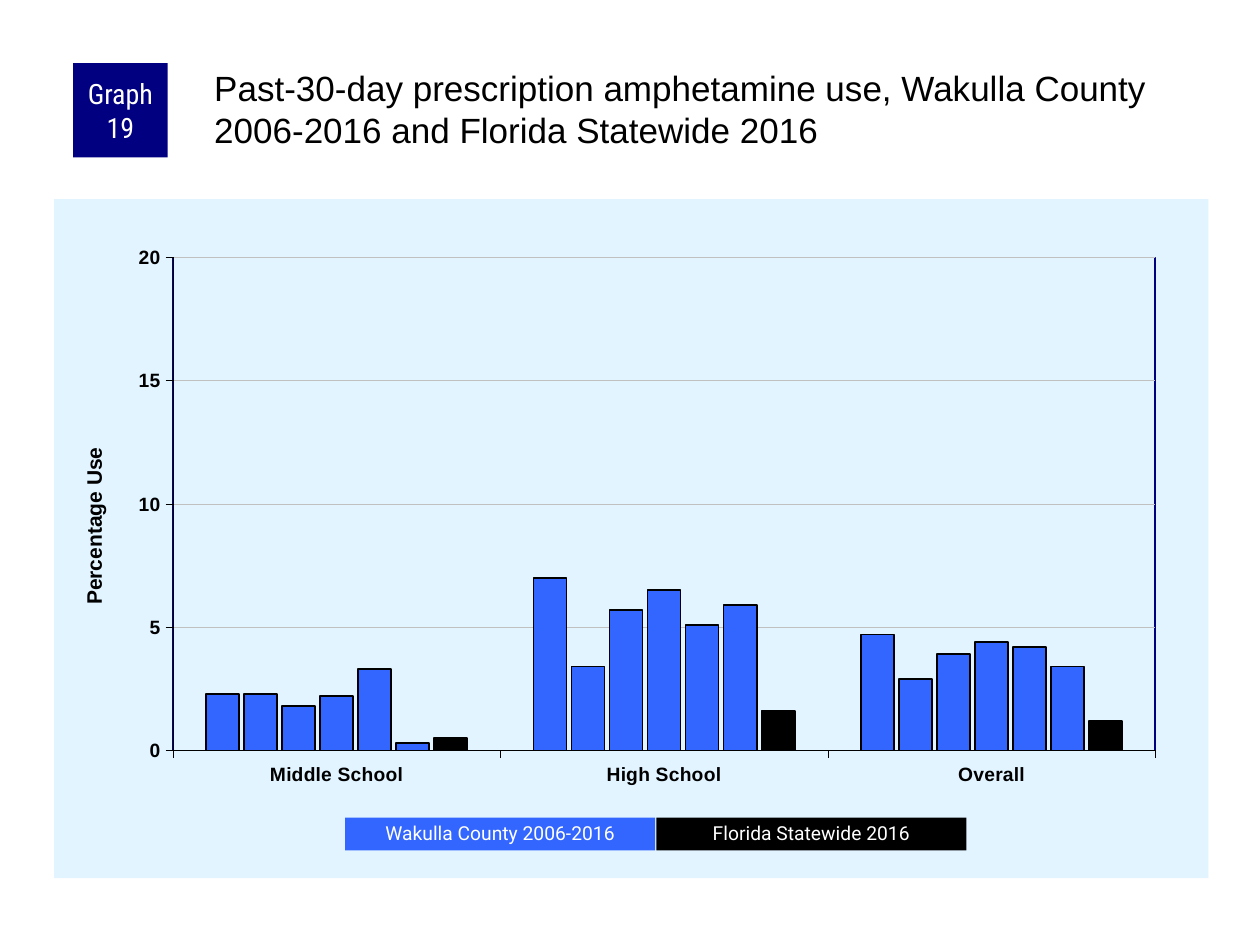
"""Build the slide on past-30-day prescription amphetamine use."""
from lxml import etree
from pptx import Presentation
from pptx.chart.data import CategoryChartData
from pptx.dml.color import RGBColor
from pptx.enum import chart as charts, shapes, text
from pptx.oxml import parse_xml
from pptx.oxml.ns import nsdecls, qn
from pptx.util import Inches, Pt

COLORS = {"black": "000000", "white": "FFFFFF", "navy": "000080", "blue": "3366FF",
          "panel": "E1F4FF", "grid": "C0C0C0"}
TITLE = ("Past-30-day prescription amphetamine use, Wakulla County "
         "2006-2016 and Florida Statewide 2016")
LEGEND = [("Wakulla County 2006-2016", "blue"), ("Florida Statewide 2016", "black")]
LEGEND_LEFT, LEGEND_STEP = 2.74, 2.47
CATEGORIES = ["Middle School", "High School", "Overall"]
SERIES = [
    ((2.3, 7, 4.7), "blue"),
    ((2.3, 3.4, 2.9), "blue"),
    ((1.8, 5.7, 3.9), "blue"),
    ((2.2, 6.5, 4.4), "blue"),
    ((3.3, 5.1, 4.2), "blue"),
    ((0.3, 5.9, 3.4), "blue"),
    ((0.5, 1.6, 1.2), "black"),
]
PLOT_LAYOUT = {"x": 0.103, "y": 0.086, "w": 0.851, "h": 0.726}
AXIS_TITLE_LAYOUT = {"x": 0.02, "y": 0.36}


def color(name):
    return RGBColor.from_string(COLORS[name])


def style_font(font, size, name="Arial", ink="black", bold=False):
    font.size, font.name, font.bold = Pt(size), name, bold
    font.color.rgb = color(ink)


def style_line(line, ink, width):
    line.color.rgb = color(ink)
    line.width = Pt(width)


def add_text(slide, words, box, fill=None, size=11, font="Roboto", ink="white",
             align=text.PP_ALIGN.CENTER, anchor=text.MSO_ANCHOR.MIDDLE,
             margins=(0.1, 0.05, 0.1, 0.05), spacing=None):
    place = [Inches(value) for value in box]
    if fill:
        shape = slide.shapes.add_shape(shapes.MSO_SHAPE.RECTANGLE, *place)
        shape.shadow.inherit = False
        shape.fill.solid()
        shape.fill.fore_color.rgb = color(fill)
        shape.line.fill.background()
    else:
        shape = slide.shapes.add_textbox(*place)
    frame = shape.text_frame
    frame.word_wrap = True
    frame.vertical_anchor = anchor
    for side, margin in zip(("left", "top", "right", "bottom"), margins):
        setattr(frame, f"margin_{side}", Inches(margin))
    paragraph = frame.paragraphs[0]
    paragraph.alignment = align
    paragraph.line_spacing = spacing
    run = paragraph.add_run()
    run.text = words
    style_font(run.font, size, font, ink)


def set_layout(element, index, places, inner=False):
    for old in element.findall(qn("c:layout")):
        element.remove(old)
    layout = etree.Element(qn("c:layout"))
    manual = etree.SubElement(layout, qn("c:manualLayout"))
    settings = [("layoutTarget", "inner")] if inner else []
    settings += [("xMode", "edge"), ("yMode", "edge"), *places.items()]
    for tag, value in settings:
        etree.SubElement(manual, qn(f"c:{tag}")).set("val", str(value))
    element.insert(index, layout)


def shape_properties(fill, line):
    return parse_xml(f'<c:spPr {nsdecls("c", "a")}>{fill}{line}</c:spPr>')


def solid(name):
    return f'<a:solidFill><a:srgbClr val="{COLORS[name]}"/></a:solidFill>'


def style_axis(axis):
    axis.major_tick_mark = charts.XL_TICK_MARK.OUTSIDE
    axis.minor_tick_mark = charts.XL_TICK_MARK.NONE
    style_font(axis.tick_labels.font, 11, bold=True)
    style_line(axis.format.line, "black", 0.25)


def add_use_chart(slide):
    data = CategoryChartData()
    data.categories = CATEGORIES
    for number, (values, _) in enumerate(SERIES, 1):
        data.add_series(f"Series {number}", values)
    place = [Inches(value) for value in (0.43, 1.58, 9.16, 5.39)]
    chart = slide.shapes.add_chart(charts.XL_CHART_TYPE.COLUMN_CLUSTERED, *place, data).chart
    chart.has_legend = chart.has_title = False
    style_font(chart.font, 8)
    plot = chart.plots[0]
    plot.gap_width, plot.overlap, plot.vary_by_categories = 200, -15, False
    for series, (_, fill) in zip(plot.series, SERIES):
        series.format.fill.solid()
        series.format.fill.fore_color.rgb = color(fill)
        style_line(series.format.line, "black", 1)

    style_axis(chart.category_axis)
    axis = chart.value_axis
    style_axis(axis)
    axis.minimum_scale, axis.maximum_scale, axis.major_unit = 0, 20, 5
    axis.has_major_gridlines = True
    style_line(axis.major_gridlines.format.line, "grid", 0.25)
    title = axis.axis_title
    title.text_frame.text = "Percentage Use"
    style_font(title.text_frame.paragraphs[0].runs[0].font, 12, bold=True)
    title.text_frame._txBody.bodyPr.set("rot", "-5400000")
    title.text_frame._txBody.bodyPr.set("vert", "horz")
    set_layout(title._element, 1, AXIS_TITLE_LAYOUT)

    chart_element = chart._chartSpace.find(qn("c:chart"))
    plot_area = chart_element.find(qn("c:plotArea"))
    set_layout(plot_area, 0, PLOT_LAYOUT, inner=True)
    border = f'<a:ln w="{Pt(1)}">{solid("navy")}</a:ln>'
    plot_area.append(shape_properties("<a:noFill/>", border))
    chart_element.addnext(shape_properties(solid("panel"), "<a:ln><a:noFill/></a:ln>"))


def main():
    presentation = Presentation()
    presentation.slide_width, presentation.slide_height = Inches(10), Inches(7.5)
    slide = presentation.slides.add_slide(presentation.slide_layouts[6])
    add_use_chart(slide)
    add_text(slide, "Graph 19", (0.58, 0.5, 0.75, 0.75), fill="navy", size=16,
             font="Roboto Condensed", margins=(0.05, 0, 0.05, 0))
    add_text(slide, TITLE, (1.67, 0.5, 7.92, 0.83), size=20, font="Arial", ink="black",
             align=text.PP_ALIGN.LEFT, anchor=text.MSO_ANCHOR.TOP, margins=(0.03, 0.03, 0, 0))
    for index, (label, fill) in enumerate(LEGEND):
        add_text(slide, label, (LEGEND_LEFT + index * LEGEND_STEP, 6.49, 2.46, 0.26),
                 fill=fill, spacing=0.9)
    presentation.save("out.pptx")


if __name__ == "__main__":
    main()
